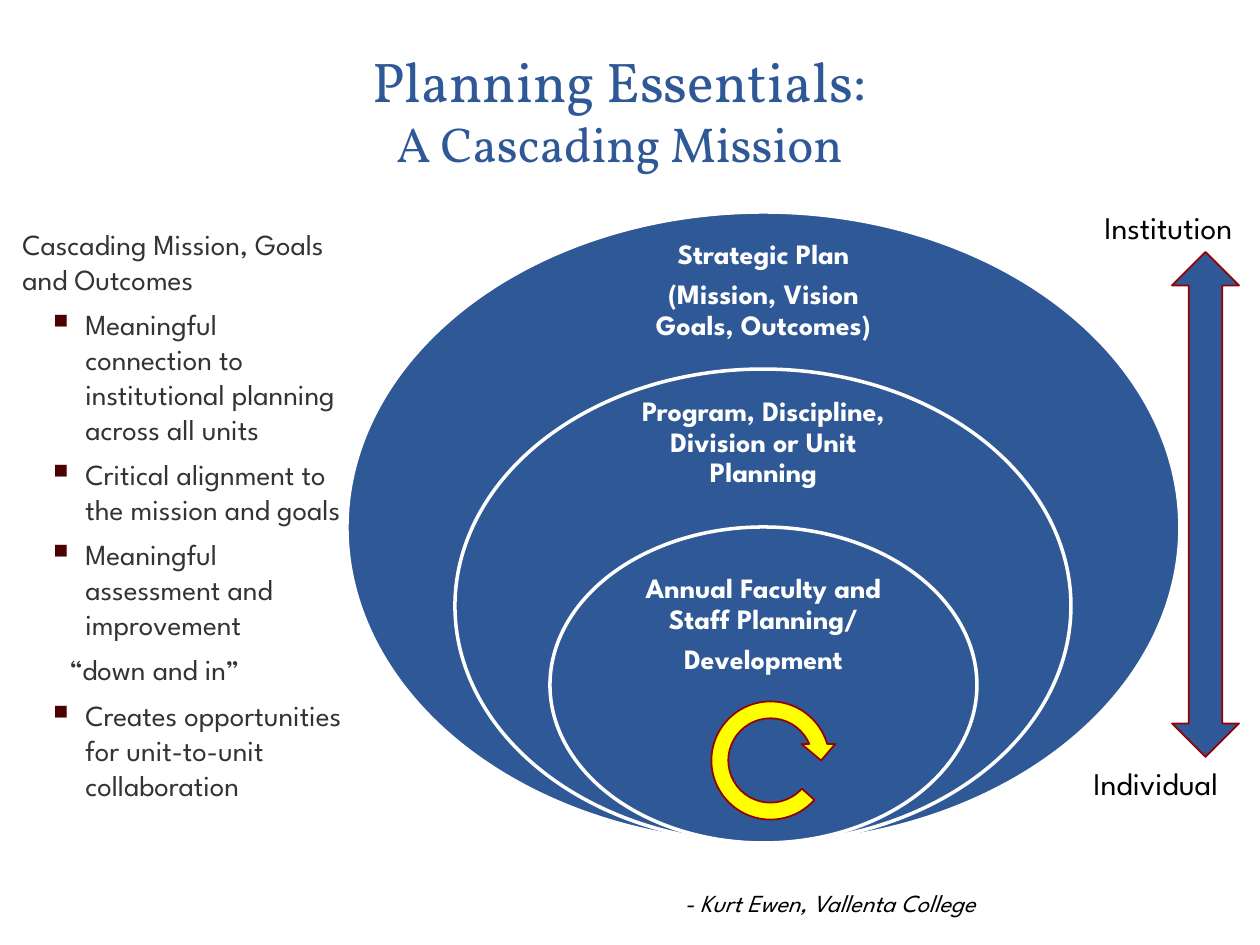
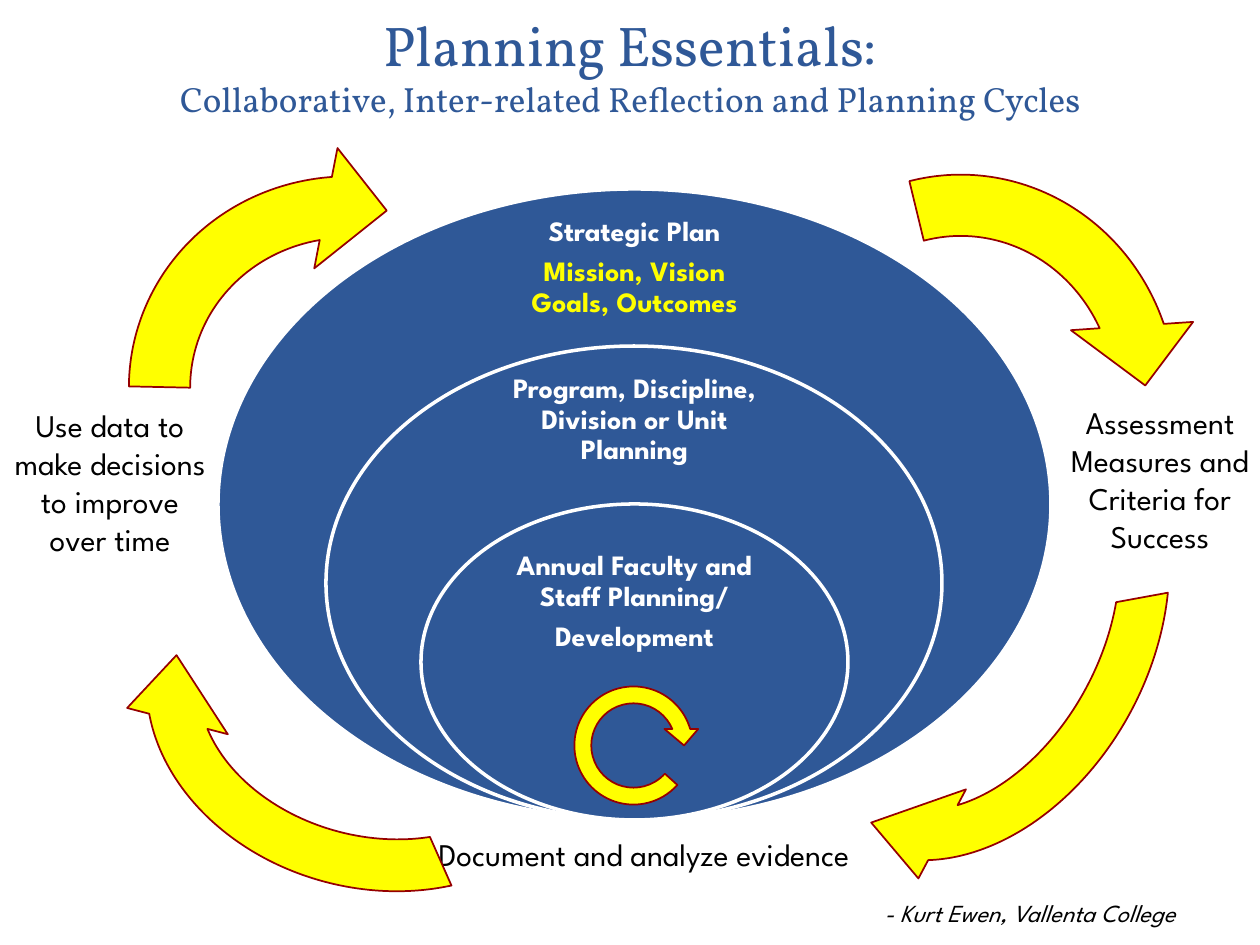
"""Two slides on planning essentials: nested plan ovals, labels and cycle arrows."""
from lxml.etree import SubElement
from pptx import Presentation
from pptx.dml.color import RGBColor as Rgb
from pptx.enum.shapes import MSO_SHAPE as Kind
from pptx.enum.text import MSO_ANCHOR as Anchor, PP_ALIGN as Align
from pptx.oxml.ns import qn
from pptx.util import Pt

PX = 914400 / 126
HUE = {"blue": "2F5897", "gold": "FFFF00", "edge": "960000", "white": "FFFFFF",
       "black": "000000", "gray": "333333", "mark": "4D0000"}
SANS, SERIF = "League Spartan", "Vollkorn"


def draw(home, kind, box, fill, edge, width, turn=0, adjust=()):
    item = home.add_shape(kind, *[round(n * PX) for n in box])
    item.shadow.inherit = False
    item.fill.solid()
    item.fill.fore_color.rgb = Rgb.from_string(HUE[fill])
    item.line.color.rgb = Rgb.from_string(HUE[edge])
    item.line.width = Pt(width)
    item.rotation = turn
    for i, value in enumerate(adjust):
        item.adjustments[i] = value


def write(home, box, paras, align=Align.CENTER, face=SANS, anchor=Anchor.TOP,
          bold=False, italic=False):
    frame = home.add_textbox(*[round(n * PX) for n in box]).text_frame
    frame.word_wrap = True
    frame.vertical_anchor = anchor
    for i, runs in enumerate(paras):
        para = frame.paragraphs[0] if i == 0 else frame.add_paragraph()
        para.alignment = align
        for j, (words, size, hue) in enumerate(runs):
            if j:
                para.add_line_break()
            run = para.add_run()
            run.text = words
            font = run.font
            font.name, font.size = face, Pt(size)
            font.bold, font.italic = bold, italic
            font.color.rgb = Rgb.from_string(HUE[hue])
    return frame


deck = Presentation()
deck.slide_width, deck.slide_height = round(1260 * PX), round(945 * PX)

PAGES = [
    {"title": (42, 21, 1155, 158), "sub": ("A Cascading Mission", 28),
     "ovals": (347, 212), "goals": ("(Mission, Vision Goals, Outcomes)", "white"),
     "loop": (703, 693), "credit": (672, 882)},
    {"title": (32, -32, 1197, 158),
     "sub": ("Collaborative, Inter-related Reflection and Planning Cycles", 20),
     "ovals": (218, 189), "goals": ("Mission, Vision Goals, Outcomes", "gold"),
     "loop": (566, 678), "credit": (872, 892)},
]
SWEEP = (0.125, 11.423, 204.577)

slides = []
for page in PAGES:
    slide = deck.slides.add_slide(deck.slide_layouts[6])
    slides.append(slide)
    write(slide.shapes, page["title"],
          [[("Planning Essentials:", 32, "blue"), (*page["sub"], "blue")]],
          face=SERIF, anchor=Anchor.BOTTOM)

    left, top = page["ovals"]
    levels = [
        ((0, 0, 833, 631), (271, 32, 291, 94),
         [("Strategic Plan", "white"), page["goals"]]),
        ((108, 157, 616, 474), (273, 187, 287, 88),
         [("Program, Discipline, Division or Unit Planning", "white")]),
        ((203, 315, 427, 316), (266, 366, 301, 94),
         [("Annual Faculty and Staff Planning/", "white"), ("Development", "white")]),
    ]
    nest = slide.shapes.add_group_shape().shapes
    for (x, y, w, h), (tx, ty, tw, th), lines in levels:
        draw(nest, Kind.OVAL, (left + x, top + y, w, h), "blue", "white", 2)
        frame = write(nest, (left + tx, top + ty, tw, th),
                      [[(words, 16, hue)] for words, hue in lines],
                      anchor=Anchor.MIDDLE, bold=True)
        frame.margin_left = frame.margin_right = round(15 * PX)
        frame.margin_top = frame.margin_bottom = round(15 * PX)
        for para in frame.paragraphs:
            para.line_spacing = 0.9
            para.space_after = Pt(5.6)

    draw(slide.shapes, Kind.CIRCULAR_ARROW, (*page["loop"], 135, 135),
         "gold", "edge", 1, 0, (*SWEEP, 25.174, 0.125))
    write(slide.shapes, (*page["credit"], 451, 43),
          [[("- Kurt Ewen, Vallenta College", 14, "black")]],
          align=Align.LEFT, italic=True)

first, second = [slide.shapes for slide in slides]

POINTS = [
    ("Cascading Mission, Goals and Outcomes", 0, 0),
    ("Meaningful connection to institutional planning across all units", 63, -32),
    ("Critical alignment to the mission and goals", 63, -32),
    ("Meaningful assessment and improvement", 63, -32),
    ("“down and in”", 47, 0),
    ("Creates opportunities for unit-to-unit collaboration", 63, -32),
]
body = write(first, (10, 220, 350, 630),
             [[(words, 16.6, "gray")] for words, _, _ in POINTS], align=Align.LEFT)
for para, (_, inset, hang) in zip(body.paragraphs, POINTS):
    para.space_before = Pt(6 if inset else 0)
    props = para._p.get_or_add_pPr()
    props.set("marL", str(round(inset * PX)))
    props.set("indent", str(round(hang * PX)))
    if hang:
        tint = SubElement(props, qn("a:buClr"))
        SubElement(tint, qn("a:srgbClr")).set("val", HUE["mark"])
        SubElement(props, qn("a:buSzPct")).set("val", "70000")
        SubElement(props, qn("a:buChar")).set("char", "■")

draw(first, Kind.UP_DOWN_ARROW, (1172, 252, 67, 505), "blue", "edge", 1)
for words, x, y in [("Institution", 1092, 202), ("Individual", 1081, 758)]:
    write(first, (x, y, 189, 50), [[(words, 18, "black")]], align=Align.LEFT)

for words, box in [
    ("Use data to make decisions to improve over time", (0, 400, 220, 204)),
    ("Document and analyze evidence", (396, 829, 496, 90)),
    ("Assessment Measures and Criteria for Success", (1050, 397, 220, 165)),
]:
    write(second, box, [[(words, 18, "black")]])

for box, turn, start in [
    ((704, 426, 542, 404), 118.1, 138.913),
    ((118, 498, 508, 416), 194.6, 138.913),
    ((107, 137, 490, 508), 280.9, 156.17),
    ((717, 144, 490, 508), 356.1, 156.17),
]:
    draw(second, Kind.CIRCULAR_ARROW, box, "gold", "edge", 1, turn,
         (*SWEEP, start, 0.125))

deck.save("out.pptx")
